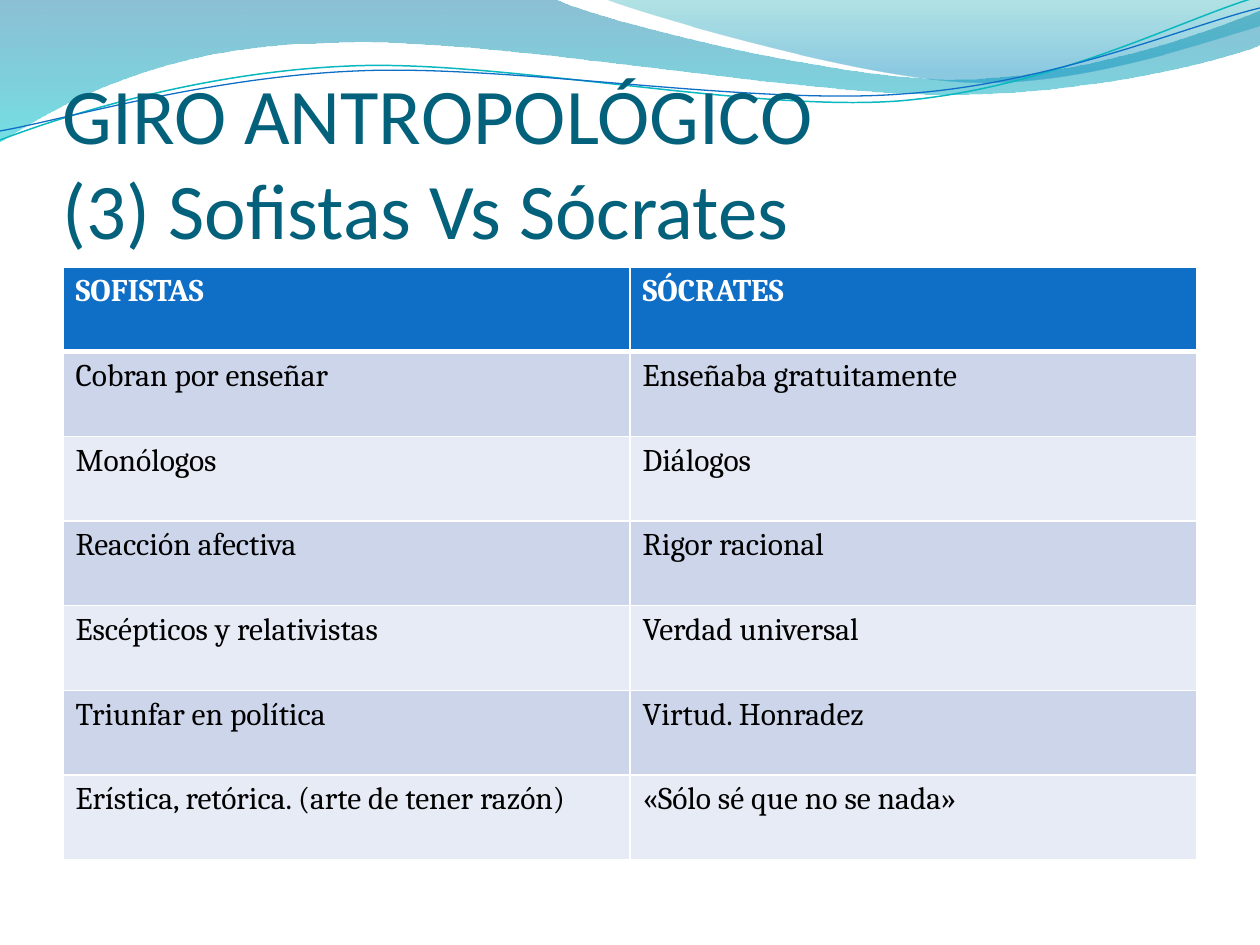
from lxml.etree import SubElement as Sub
from pptx import Presentation
from pptx.dml.color import RGBColor as RGB
from pptx.enum.text import MSO_ANCHOR as Anchor
from pptx.oxml.ns import qn
from pptx.util import Pt

PX = 914400 / 126  # EMU in one px

theme = dict(
    title="04617B", head="0F6FC6", bands=("E7EBF5", "CCD5EA"), ink="000000", white="FFFFFF",
    teal="0AB8BF", title_font="Calibri", body_font="Cambria", title_size=45, body_size=18,
)


def write(frame, text, font, size, color, bold=False):
    para = frame.paragraphs[0]
    para.text = text
    for run in para.runs:
        run.font.name, run.font.size, run.font.bold = font, Pt(size), bold
        run.font.color.rgb = RGB.from_string(color)


def draw(start, parts, close):
    """Draw a path; a part is one point (line) or three (cubic curve)."""
    path = slide.shapes.build_freeform(*start, scale=PX)
    path.add_line_segments([pt for part in parts for pt in part], close=close)
    shape = path.convert_to_shape()
    shape.shadow.inherit = False
    # Join each three line steps of a curve into one cubic step
    steps = iter(list(shape._element.spPr.iter(qn("a:lnTo"))))
    for part in parts:
        group = [next(steps) for _ in part]
        if len(group) == 3:
            cubic = group[0].makeelement(qn("a:cubicBezTo"))
            group[0].addprevious(cubic)
            for step in group:
                cubic.append(step[0])
                step.getparent().remove(step)
    return shape


def px(n):
    return round(n * PX)


deck = Presentation()
deck.slide_width, deck.slide_height = px(1260), px(945)
slide = deck.slides.add_slide(deck.slide_layouts[6])

# Waves: start, parts, stops of (position, colour, opacity %)
waves = [
    ((0, 0), [
        [(554, -1)],
        [(600, 21), (837, 79), (955, 79)],
        [(1074, 79), (1207, 33), (1260, 11)],
        [(1261, 45)],
        [(1239, 55), (1096, 96), (940, 94)],
        [(784, 94), (481, 35), (324, 43)],
        [(163, 45), (58, 105), (-1, 142)],
    ], [(0, "0074A1", 45), (1, "00C6CF", 55)]),
    ((604, -1), [
        [(641, 14), (859, 78), (969, 82)],
        [(1079, 87), (1211, 40), (1260, 26)],
        [(1260, 0)],
    ], [(0, "00A1A9", 30), (0.8, "008BBF", 45)]),
]
for start, parts, stops in waves:
    wave = draw(start, parts, True)
    wave.line.fill.background()
    wave.fill.gradient()
    wave.fill.gradient_angle = 270
    for stop, (pos, color, _) in zip(wave.fill.gradient_stops, stops):
        stop.position, stop.color.rgb = pos, RGB.from_string(color)
    tints = list(wave._element.spPr.iter(qn("a:srgbClr")))
    for tint, (_, _, alpha) in zip(tints, stops):
        Sub(tint, qn("a:alpha"), val=str(alpha * 1000))

# Thin curves over the waves
curves = [
    ((0, 140), [
        [(60, 117), (199, 72), (349, 66)],
        [(498, 59), (747, 112), (898, 101)],
        [(1050, 89), (1182, 19), (1257, -3)],
    ], theme["teal"], 0.85),
    ((0, 131), [
        [(59, 121), (207, 77), (357, 71)],
        [(508, 64), (752, 106), (903, 94)],
        [(1053, 84), (1186, 26), (1260, 8)],
    ], theme["head"], 0.75),
]
for start, parts, color, width in curves:
    curve = draw(start, parts, False)
    curve.fill.background()
    curve.line.color.rgb = RGB.from_string(color)
    curve.line.width = Pt(width)

# Title
frame = slide.shapes.add_textbox(px(63), px(97), px(1134), px(158)).text_frame
frame.word_wrap, frame.vertical_anchor = True, Anchor.BOTTOM
frame.margin_left = frame.margin_right = frame.margin_bottom = 0
frame.margin_top = px(6)
write(frame, "GIRO ANTROPOLÓGICO \v(3) Sofistas Vs Sócrates",
      theme["title_font"], theme["title_size"], theme["title"])

# Table
rows = [
    ("SOFISTAS", "SÓCRATES"),
    ("Cobran por enseñar", "Enseñaba gratuitamente"),
    ("Monólogos", "Diálogos"),
    ("Reacción afectiva", "Rigor racional"),
    ("Escépticos y relativistas", "Verdad universal"),
    ("Triunfar en política", "Virtud. Honradez"),
    ("Erística, retórica. (arte de tener razón)", "«Sólo sé que no se nada»"),
]
tall = px(593)
table = slide.shapes.add_table(len(rows), 2, px(63), px(267), px(1134), tall).table
for r, row in enumerate(rows):
    table.rows[r].height = tall // len(rows)
    head = r == 0
    for c, text in enumerate(row):
        cell = table.cell(r, c)
        write(cell.text_frame, text, theme["body_font"], theme["body_size"],
              theme["white"] if head else theme["ink"], head)
        # White borders, thick under the head
        props = cell._tc.get_or_add_tcPr()
        for side in "LRTB":
            thick = (r, side) in ((0, "B"), (1, "T"))
            edge = Sub(props, qn("a:ln" + side), w=str(Pt(3 if thick else 1)))
            Sub(Sub(edge, qn("a:solidFill")), qn("a:srgbClr"), val=theme["white"])
        cell.fill.solid()
        cell.fill.fore_color.rgb = RGB.from_string(theme["head"] if head else theme["bands"][r % 2])

deck.save("out.pptx")
